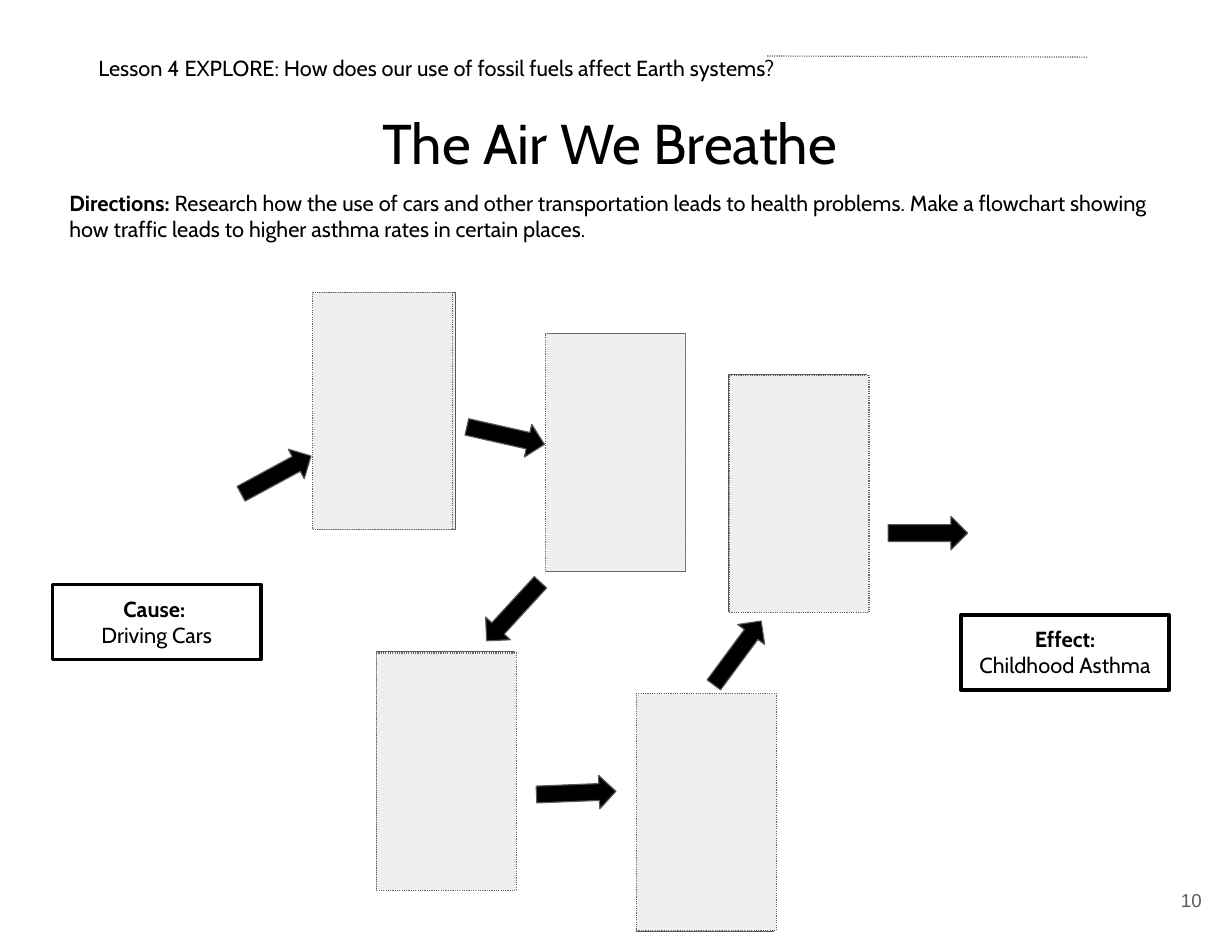
from lxml import etree
from pptx import Presentation
from pptx.dml.color import RGBColor
from pptx.enum.dml import MSO_LINE
from pptx.enum.shapes import MSO_CONNECTOR, MSO_SHAPE
from pptx.enum.text import MSO_ANCHOR, PP_ALIGN
from pptx.oxml.ns import qn
from pptx.util import Inches, Pt

BLACK = RGBColor(0x00, 0x00, 0x00)
GRAY = RGBColor(0x59, 0x59, 0x59)
DOT_GRAY = RGBColor(0x66, 0x66, 0x66)
BACK_FILL = RGBColor(0xEE, 0xEE, 0xEE)
STEP_FILL = RGBColor(0xEF, 0xEF, 0xEF)

STEP_HEIGHT = 2.12
BACK_WIDTH, STEP_WIDTH = 1.23, 1.25
# Left and top of each flowchart step: solid backing, then dotted front
BACKINGS = [(2.84, 2.61), (4.89, 2.98), (3.36, 5.82), (5.68, 6.2), (6.51, 3.34)]
STEPS = [(2.79, 2.61), (4.87, 2.98), (6.51, 3.35), (3.36, 5.83), (5.68, 6.19)]
# Left, top and rotation of each arrow, in flow order
ARROWS = [
    (2.11, 4.09, 331.6),
    (4.16, 3.74, 12.7),
    (4.23, 5.31, 132.6),
    (4.79, 6.93, 357.7),
    (6.23, 5.68, 306.5),
    (7.93, 4.61, 0),
]


def fill_text(shape, paragraphs, size=14, font="Cabin", color=BLACK,
              align=PP_ALIGN.LEFT, anchor=MSO_ANCHOR.TOP, inset=0.1,
              spacing=None, after=None):
    """Write paragraphs, each a list of (text, bold) runs."""
    frame = shape.text_frame
    frame.word_wrap = True
    frame.vertical_anchor = anchor
    frame.margin_left = frame.margin_right = Inches(inset)
    frame.margin_top = frame.margin_bottom = Inches(inset)
    for index, runs in enumerate(paragraphs):
        paragraph = frame.add_paragraph() if index else frame.paragraphs[0]
        paragraph.alignment = align
        if spacing:
            paragraph.line_spacing = spacing
        if after:
            paragraph.space_after = Pt(after)
        for text, bold in runs:
            run = paragraph.add_run()
            run.text = text
            run.font.size = Pt(size)
            run.font.name = font
            run.font.bold = bold
            run.font.color.rgb = color


def add_text(slide, left, top, width, height, paragraphs, **style):
    box = slide.shapes.add_textbox(
        Inches(left), Inches(top), Inches(width), Inches(height))
    fill_text(box, paragraphs, **style)


def add_outlined(slide, kind, left, top, width, height, fill, line, weight=0.75):
    shape = slide.shapes.add_shape(
        kind, Inches(left), Inches(top), Inches(width), Inches(height))
    shape.shadow.inherit = False
    if fill is None:
        shape.fill.background()
    else:
        shape.fill.solid()
        shape.fill.fore_color.rgb = fill
    shape.line.color.rgb = line
    shape.line.width = Pt(weight)
    return shape


def add_endpoint(slide, left, top, heading, detail):
    box = add_outlined(slide, MSO_SHAPE.RECTANGLE, left, top, 1.86, 0.67,
                       None, BLACK, 2.25)
    fill_text(box, [[(heading, True)], [(detail, False)]], align=PP_ALIGN.CENTER)


def add_arrow(slide, left, top, rotation):
    arrow = add_outlined(slide, MSO_SHAPE.RIGHT_ARROW, left, top, 0.71, 0.3,
                         BLACK, GRAY)
    arrow.rotation = rotation


def add_dotted_rule(slide, x1, y1, x2, y2):
    rule = slide.shapes.add_connector(
        MSO_CONNECTOR.STRAIGHT, Inches(x1), Inches(y1), Inches(x2), Inches(y2))
    rule.line.color.rgb = GRAY
    rule.line.width = Pt(0.75)
    rule.line.dash_style = MSO_LINE.ROUND_DOT
    etree.SubElement(rule._element.spPr, qn("a:effectLst"))


def main():
    prs = Presentation()
    prs.slide_width, prs.slide_height = Inches(11), Inches(8.5)
    slide = prs.slides.add_slide(prs.slide_layouts[6])

    # Lesson header, title and directions
    add_text(slide, 0.78, 0.31, 6.41, 0.56,
             [[("Lesson 4 EXPLORE: How does our use of fossil fuels affect "
                "Earth systems?", False)]],
             anchor=MSO_ANCHOR.MIDDLE, spacing=1.15, after=10)
    add_text(slide, 0, 0.78, 11, 0.81, [[("The Air We Breathe ", False)]],
             size=36, align=PP_ALIGN.CENTER, spacing=1.15, after=10)
    add_dotted_rule(slide, 6.85, 0.5, 9.71, 0.51)
    add_text(slide, 0.52, 1.59, 9.98, 0.67,
             [[("Directions: ", True),
               ("Research how the use of cars and other transportation leads to "
                "health problems. Make a flowchart showing how traffic leads to "
                "higher asthma rates in certain places.", False)]])

    # Start and end of the flowchart
    add_endpoint(slide, 8.58, 5.49, "Effect:", "Childhood Asthma")
    add_endpoint(slide, 0.47, 5.22, "Cause: ", "Driving Cars")

    # Empty steps and the arrows between them
    for left, top in BACKINGS:
        add_outlined(slide, MSO_SHAPE.RECTANGLE, left, top,
                     BACK_WIDTH, STEP_HEIGHT, BACK_FILL, GRAY)
    for left, top, rotation in ARROWS:
        add_arrow(slide, left, top, rotation)
    for left, top in STEPS:
        step = add_outlined(slide, MSO_SHAPE.RECTANGLE, left, top,
                            STEP_WIDTH, STEP_HEIGHT, STEP_FILL, DOT_GRAY)
        step.line.dash_style = MSO_LINE.ROUND_DOT

    # Page number
    add_text(slide, 10.19, 7.71, 0.66, 0.65, [[("10", False)]], size=12,
             font="Arial", color=GRAY, align=PP_ALIGN.RIGHT,
             anchor=MSO_ANCHOR.MIDDLE, inset=0.12)

    prs.save("out.pptx")


if __name__ == "__main__":
    main()
